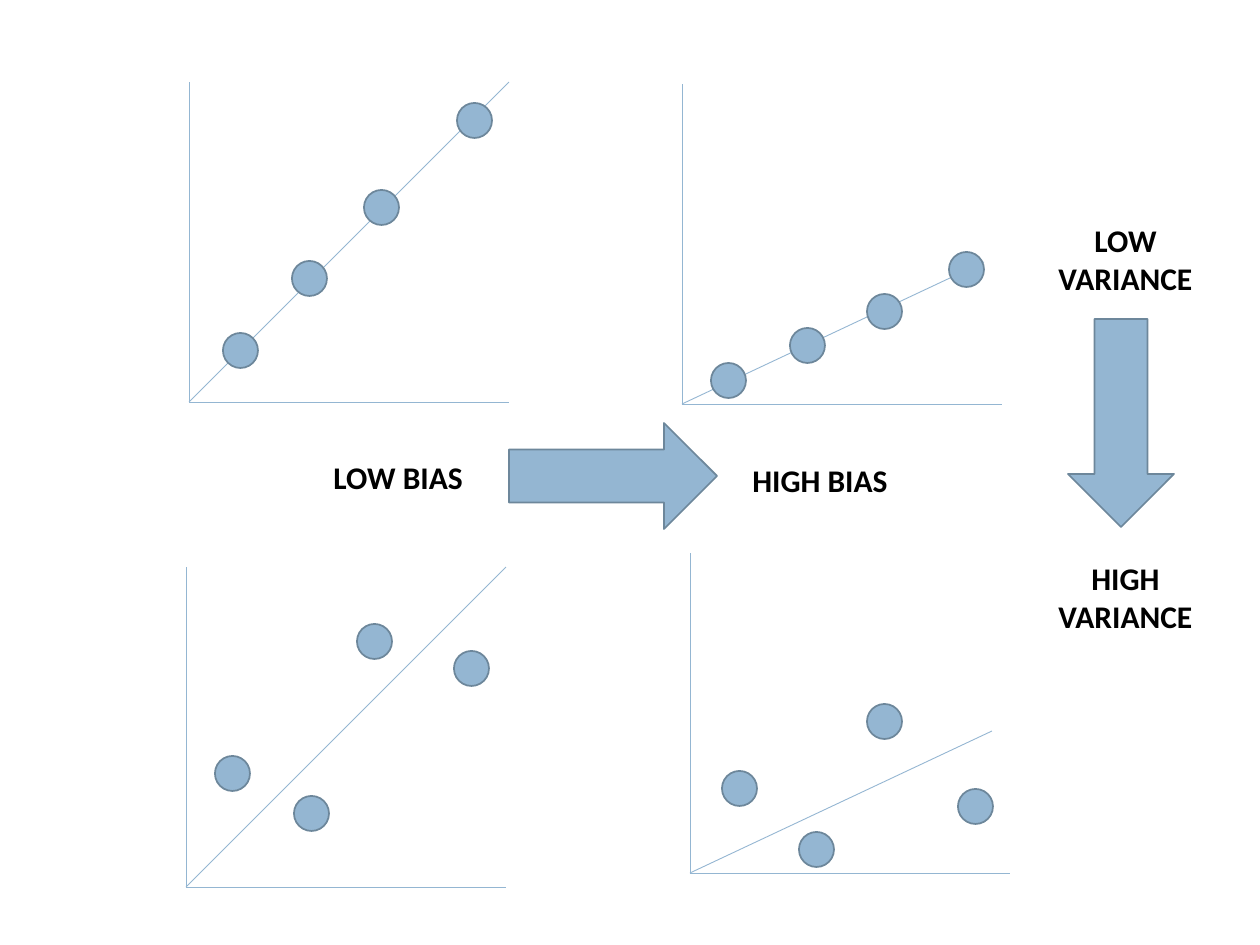
import pptx
import pptx.util
from dataclasses import dataclass
from lxml import etree
from pptx.dml.color import RGBColor
from pptx.enum.shapes import MSO_CONNECTOR, MSO_SHAPE
from pptx.enum.text import MSO_AUTO_SIZE, PP_ALIGN
from pptx.oxml.ns import qn

EMU_PER_PX = 914400 / 126


def px(length):
    return pptx.util.Emu(round(length * EMU_PER_PX))


@dataclass(frozen=True)
class Theme:
    fill: RGBColor = RGBColor(0x94, 0xB6, 0xD2)
    outline: RGBColor = RGBColor(0x6D, 0x87, 0x9B)
    text: RGBColor = RGBColor(0, 0, 0)
    font: str = "Calibri"
    label_size: int = 18
    line_width: float = 0.5
    outline_width: float = 1


class DiagramBuilder:
    AXIS = 320
    DOT = 35

    def __init__(self, slide, theme):
        self.slide = slide
        self.theme = theme

    def line(self, start, end):
        connector = self.slide.shapes.add_connector(
            MSO_CONNECTOR.STRAIGHT, *map(px, (*start, *end)))
        connector.line.color.rgb = self.theme.fill
        connector.line.width = pptx.util.Pt(self.theme.line_width)
        etree.SubElement(connector._element.spPr, qn("a:effectLst"))

    def shape(self, kind, left, top, width, height, rotation=0):
        shape = self.slide.shapes.add_shape(
            kind, *map(px, (left, top, width, height)))
        shape.rotation = rotation
        shape.shadow.inherit = False
        shape.fill.solid()
        shape.fill.fore_color.rgb = self.theme.fill
        shape.line.color.rgb = self.theme.outline
        shape.line.width = pptx.util.Pt(self.theme.outline_width)

    def label(self, lines, left, top, width, height, alignment=PP_ALIGN.LEFT):
        box = self.slide.shapes.add_textbox(
            *map(px, (left, top, width, height)))
        frame = box.text_frame
        frame.word_wrap = False
        frame.auto_size = MSO_AUTO_SIZE.SHAPE_TO_FIT_TEXT
        frame.text = "\n".join(lines)
        for paragraph in frame.paragraphs:
            paragraph.alignment = alignment
            paragraph.font.name = self.theme.font
            paragraph.font.size = pptx.util.Pt(self.theme.label_size)
            paragraph.font.bold = True
            paragraph.font.color.rgb = self.theme.text

    def plot(self, origin, trend, dots):
        x, y = origin
        self.line(origin, (x + trend[0], y - trend[1]))
        self.line(origin, (x + self.AXIS, y))
        self.line(origin, (x, y - self.AXIS))
        for left, top in dots:
            self.shape(MSO_SHAPE.OVAL, left, top, self.DOT, self.DOT)


def main():
    presentation = pptx.Presentation()
    presentation.slide_width = px(1260)
    presentation.slide_height = px(945)
    slide = presentation.slides.add_slide(presentation.slide_layouts[6])
    builder = DiagramBuilder(slide, Theme())

    # Plots: origin, rise of the trend line, top left corners of the dots
    steep, shallow = (320, 320), (302, 142)
    plots = [
        ((189, 402), steep, [(223, 333), (292, 261), (364, 190), (457, 103)]),
        ((682, 404), shallow, [(711, 363), (790, 328), (867, 294), (949, 252)]),
        ((186, 887), steep, [(215, 756), (294, 796), (357, 624), (454, 651)]),
        ((690, 873), shallow, [(722, 771), (799, 832), (867, 704), (958, 789)]),
    ]
    for origin, trend, dots in plots:
        builder.plot(origin, trend, dots)

    # Bias axis
    builder.label(["LOW BIAS"], 321, 452, 194, 50)
    builder.label(["HIGH BIAS"], 740, 455, 200, 50)
    builder.shape(MSO_SHAPE.RIGHT_ARROW, 509, 423, 208, 106)

    # Variance axis
    for level, top in (("LOW", 215), ("HIGH", 553)):
        builder.label([level, "VARIANCE"], 1026, top, 199, 89, PP_ALIGN.CENTER)
    builder.shape(MSO_SHAPE.RIGHT_ARROW, 1017, 370, 208, 106, rotation=90)

    presentation.save("out.pptx")


if __name__ == "__main__":
    main()
